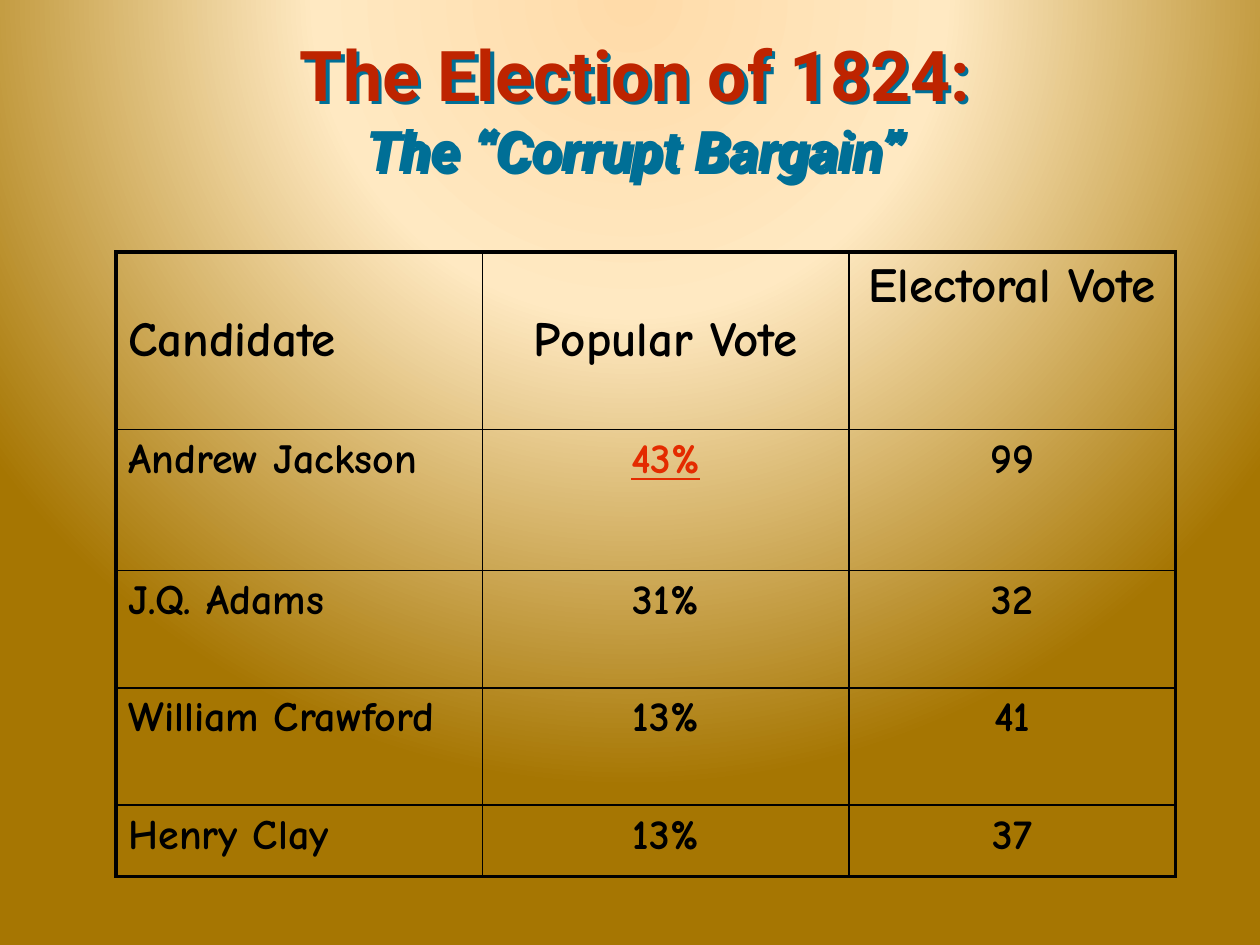
"""Build the Election of 1824 results slide."""
import pptx
import pptx.dml.color
import pptx.enum.text
import pptx.oxml
import pptx.oxml.ns
import pptx.util
from lxml import etree

Pt = pptx.util.Pt
ALIGN = pptx.enum.text.PP_ALIGN
ANCHOR = pptx.enum.text.MSO_ANCHOR
BLACK, BLUE, RED, BRICK = "000000", "006F96", "E42B00", "BE2400"

TITLE = [
    ("The Election of 1824:", {"size": Pt(40), "color": BRICK, "italic": False}),
    ("The “Corrupt Bargain”", {"size": Pt(32), "color": BLUE, "italic": True}),
]
TITLE_BOX = (41.8, 14.4, 642.2, 93.6)
RESULTS = [
    ("Candidate", "Popular Vote", "Electoral Vote"),
    ("Andrew Jackson", "43%", "99"),
    ("J.Q. Adams", "31%", "32"),
    ("William Crawford", "13%", "41"),
    ("Henry Clay", "13%", "37"),
]
HIGHLIGHT = {"43%": {"color": RED, "underline": True}}
TABLE_LEFT, TABLE_TOP = 66.2, 144
COLUMN_WIDTHS = (209.5, 209.5, 186.5)
ROW_HEIGHTS = (101.5, 80.6, 67, 67, 41)
THIN, THICK = 1, 2.25
BACKGROUND_STOPS = [(0, "FFDBA9"), (40, "FFE9C2"), (100, "A67602")]


def rgb(value):
    return pptx.dml.color.RGBColor.from_string(value)


def element(tag, parent, **attributes):
    return etree.SubElement(parent, pptx.oxml.ns.qn(tag), {k: str(v) for k, v in attributes.items()})


def style(font, values):
    for name, value in values.items():
        if name == "color":
            font.color.rgb = rgb(value)
        else:
            setattr(font, name, value)


def paint_background(page):
    page.background.fill.gradient()
    gradient = next(page.element.iter(pptx.oxml.ns.qn("a:gradFill")))
    for child in list(gradient):
        gradient.remove(child)
    stops = element("a:gsLst", gradient)
    for position, color in BACKGROUND_STOPS:
        stop = element("a:gs", stops, pos=position * 1000)
        element("a:srgbClr", stop, val=color)
    circle = element("a:path", gradient, path="circle")
    element("a:fillToRect", circle, l=50000, t=-80000, r=50000, b=180000)


def add_title(page):
    box = page.shapes.add_textbox(*map(Pt, TITLE_BOX))
    box.text_frame.word_wrap = True
    para = box.text_frame.paragraphs[0]
    para.alignment = ALIGN.CENTER
    for index, (text, values) in enumerate(TITLE):
        if index:
            para.add_line_break()
        span = para.add_run()
        span.text = text
        style(span.font, {"name": "Roboto", "bold": True, **values})
    effects = element("a:effectLst", box.element.spPr)
    shadow = element("a:outerShdw", effects, dist=Pt(2.83), dir=2700000, algn="ctr", rotWithShape=0)
    element("a:srgbClr", shadow, val=BLUE)


def add_borders(cell, widths):
    properties = cell._tc.get_or_add_tcPr()
    for index, (side, width) in enumerate(widths.items()):
        line = pptx.oxml.parse_xml(f'<a:ln{side} {pptx.oxml.ns.nsdecls("a")} w="{Pt(width)}"/>')
        element("a:srgbClr", element("a:solidFill", line), val=BLACK)
        properties.insert(index, line)


def add_results(page):
    last_row, last_column = len(RESULTS) - 1, len(COLUMN_WIDTHS) - 1
    size = (sum(COLUMN_WIDTHS), sum(ROW_HEIGHTS))
    frame = page.shapes.add_table(
        len(RESULTS), len(COLUMN_WIDTHS), *map(Pt, (TABLE_LEFT, TABLE_TOP, *size))
    )
    table = frame.table
    table.first_row = table.horz_banding = False
    for column, width in zip(table.columns, COLUMN_WIDTHS):
        column.width = Pt(width)
    for row, height in zip(table.rows, ROW_HEIGHTS):
        row.height = Pt(height)
    for r, values in enumerate(RESULTS):
        for c, text in enumerate(values):
            cell = table.cell(r, c)
            cell.fill.background()
            middle = r == 0 and c < last_column
            cell.vertical_anchor = ANCHOR.MIDDLE if middle else ANCHOR.TOP
            para = cell.text_frame.paragraphs[0]
            para.alignment = ALIGN.CENTER if c else ALIGN.LEFT
            span = para.add_run()
            span.text = text
            base = {"name": "Comic Neue", "size": Pt(24 if r else 28), "bold": True, "color": BLACK}
            style(span.font, {**base, **HIGHLIGHT.get(text, {})})
            outer = {"L": c == 0, "R": c == last_column, "T": r == 0, "B": r == last_row}
            add_borders(cell, {side: THICK if edge else THIN for side, edge in outer.items()})


def main():
    deck = pptx.Presentation()
    deck.slide_width, deck.slide_height = Pt(720), Pt(540)
    page = deck.slides.add_slide(deck.slide_layouts[6])
    paint_background(page)
    add_title(page)
    add_results(page)
    deck.save("out.pptx")


if __name__ == "__main__":
    main()
